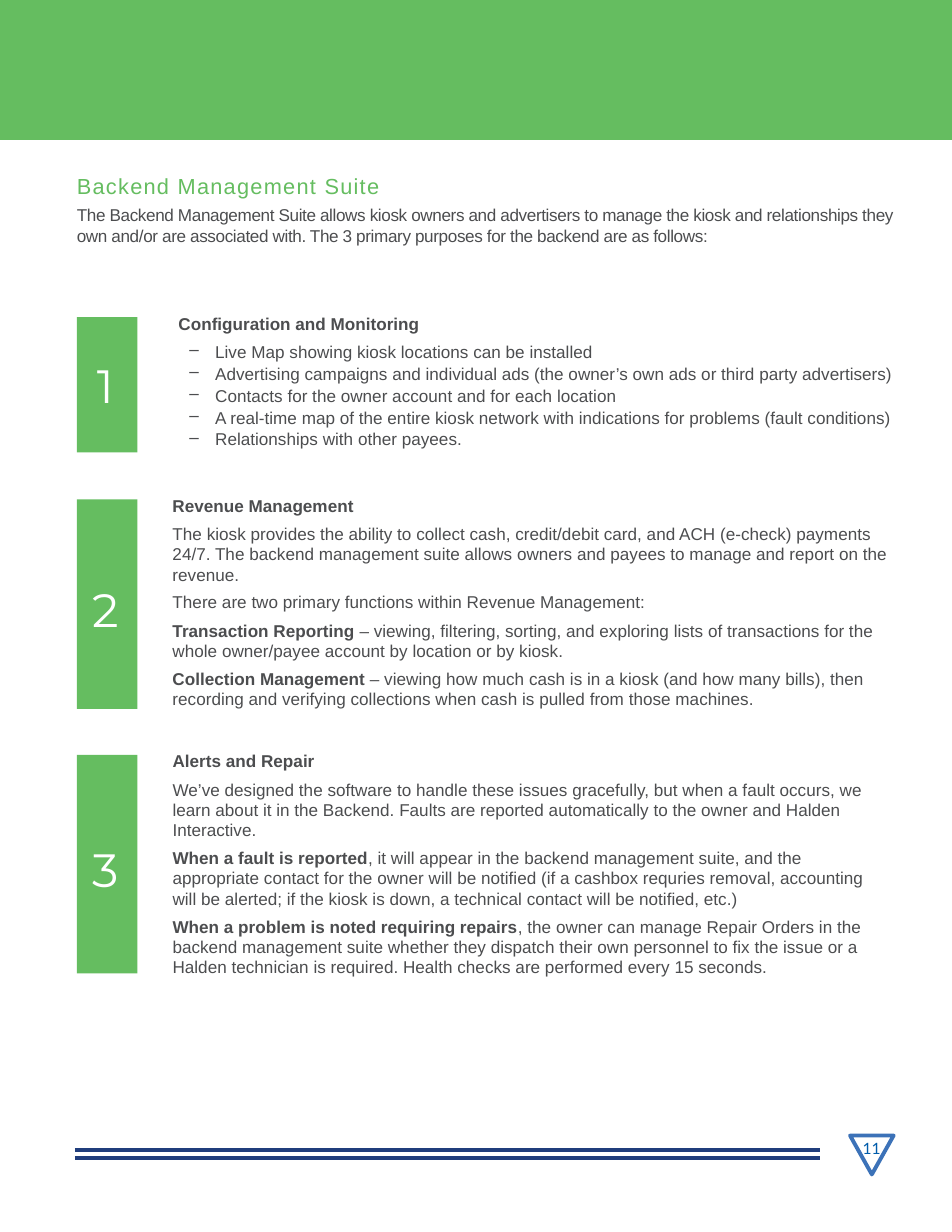
from lxml.etree import SubElement
from pptx import Presentation
from pptx.dml.color import RGBColor
from pptx.enum.shapes import MSO_CONNECTOR, MSO_SHAPE
from pptx.enum.text import MSO_ANCHOR, PP_ALIGN
from pptx.oxml.ns import qn
from pptx.util import Pt

HUES = {"green": "65BD60", "text": "4C4D4F", "navy": "203D7C",
        "blue": "3C72B8", "page": "005CAB", "white": "FFFFFF"}
BODY = {"name": "Arial", "size": Pt(11), "bold": False}
BOLD = {**BODY, "bold": True}
TITLE = {**BODY, "size": Pt(14)}
DIGIT = {"name": "Montserrat", "size": Pt(30), "bold": False}
PAGE = {"name": "Lato", "size": Pt(10), "bold": False}
FRAME = {"margin_left": 0, "margin_top": 0, "margin_right": 0,
         "margin_bottom": 0, "word_wrap": True,
         "vertical_anchor": MSO_ANCHOR.TOP}
EDGE = 0.9  # left indent of running text

INTRO = ("The Backend Management Suite allows kiosk owners and advertisers to "
         "manage the kiosk and relationships they own and/or are associated "
         "with. The 3 primary purposes for the backend are as follows:")
ITEMS = [
    "Live Map showing kiosk locations can be installed",
    "Advertising campaigns and individual ads (the owner’s own ads or third "
    "party advertisers)",
    "Contacts for the owner account and for each location",
    "A real-time map of the entire kiosk network with indications for "
    "problems (fault conditions)",
    "Relationships with other payees.",
]
# Each paragraph: bold lead, plain text, space before, line pitch
REVENUE = [
    ("Revenue Management", "", 0, None),
    ("", "The kiosk provides the ability to collect cash, credit/debit card, "
     "and ACH (e-check) payments 24/7. The backend management suite allows "
     "owners and payees to manage and report on the revenue.", 5.4, 13),
    ("", "There are two primary functions within Revenue Management:",
     4.4, None),
    ("Transaction Reporting ", "– viewing, filtering, sorting, and exploring "
     "lists of transactions for the whole owner/payee account by location or "
     "by kiosk.", 5.4, 13),
    ("Collection Management ", "– viewing how much cash is in a kiosk (and "
     "how many bills), then recording and verifying collections when cash is "
     "pulled from those machines.", 5, 13),
]
ALERTS = [
    ("Alerts and Repair", "", 0, None),
    ("", "We’ve designed the software to handle these issues gracefully, but "
     "when a fault occurs, we learn about it in the Backend. Faults are "
     "reported automatically to the owner and Halden Interactive.", 5.4, 13),
    ("When a fault is reported", ", it will appear in the backend management "
     "suite, and the appropriate contact for the owner will be notified (if a "
     "cashbox requries removal, accounting will be alerted; if the kiosk is "
     "down, a technical contact will be notified, etc.)", 5, 13),
    ("When a problem is noted requiring repairs", ", the owner can manage "
     "Repair Orders in the backend management suite whether they dispatch "
     "their own personnel to fix the issue or a Halden technician is "
     "required. Health checks are performed every 15 seconds.", 5, 13),
]
# Each tile: top, height, top inset
TILES = [(203.8, 87.1, 0), (321.1, 134.6, 5.5), (485.3, 140.4, 6)]


def hue(name):
    return RGBColor.from_string(HUES[name])


def style(item, form):
    for key, value in form.items():
        setattr(item, key, value)


def indent(para, left, first=0):
    props = para._p.get_or_add_pPr()
    props.set("marL", str(Pt(left)))
    props.set("indent", str(Pt(first)))
    return props


def write(para, text, form, tint="text", track=0):
    """Add a run; track is letter spacing in points."""
    run = para.add_run()
    run.text = text
    style(run.font, form)
    run.font.color.rgb = hue(tint)
    if track:
        run._r.get_or_add_rPr().set("spc", str(round(track * 100)))


def add_text(slide, *area):
    frame = slide.shapes.add_textbox(*map(Pt, area)).text_frame
    style(frame, FRAME)
    return frame


def next_para(frame, count):
    return frame.add_paragraph() if count else frame.paragraphs[0]


def add_title(slide, text, *area):
    title = slide.shapes.title
    style(title, dict(zip(("left", "top", "width", "height"), map(Pt, area))))
    style(title.text_frame, FRAME)
    para = title.text_frame.paragraphs[0]
    para.alignment = PP_ALIGN.LEFT
    indent(para, EDGE)
    write(para, text, TITLE, "green", 0.8)


def add_prose(slide, area, paras, track=0):
    frame = add_text(slide, *area)
    for count, (lead, text, gap, pitch) in enumerate(paras):
        para = next_para(frame, count)
        indent(para, EDGE)
        if gap:
            para.space_before = Pt(gap)
        if pitch:
            para.line_spacing = Pt(pitch)
        for part, form in ((lead, BOLD), (text, BODY)):
            if part:
                write(para, part, form, track=track)


def add_list(slide, area, items):
    frame = add_text(slide, *area)
    for count, item in enumerate(items):
        para = next_para(frame, count)
        props = indent(para, 17.3, -16.6)
        SubElement(props, qn("a:buChar")).set("char", "–")
        if count:
            para.space_before = Pt(0.8)
        write(para, item, BODY)


def add_block(slide, kind, area, fill):
    block = slide.shapes.add_shape(kind, *map(Pt, area))
    block.shadow.inherit = False
    block.fill.solid()
    block.fill.fore_color.rgb = hue(fill)
    block.line.fill.background()
    return block


def add_tile(slide, label, top, height, inset):
    tile = add_block(slide, MSO_SHAPE.RECTANGLE, (49.5, top, 38.9, height),
                     "green")
    style(tile.text_frame, {**FRAME, "margin_top": Pt(inset),
                            "margin_right": Pt(2.5),
                            "vertical_anchor": MSO_ANCHOR.MIDDLE})
    para = tile.text_frame.paragraphs[0]
    para.alignment = PP_ALIGN.CENTER
    write(para, label, DIGIT, "white")


def add_rule(slide, y):
    rule = slide.shapes.add_connector(MSO_CONNECTOR.STRAIGHT, Pt(48.2), Pt(y),
                                      Pt(527), Pt(y))
    rule.line.color.rgb = hue("navy")
    rule.line.width = Pt(2.57)
    SubElement(rule._element.spPr, qn("a:effectLst"))


def add_badge(slide, number):
    badge = add_block(slide, MSO_SHAPE.FLOWCHART_MERGE,
                      (546.5, 730, 28, 25), "white")
    badge.line.color.rgb = hue("blue")
    badge.line.width = Pt(2.5)
    para = add_text(slide, 553.7, 732.2, 13, 13.7).paragraphs[0]
    indent(para, EDGE)
    write(para, number, PAGE, "page")


def main():
    deck = Presentation()
    deck.slide_width, deck.slide_height = Pt(612), Pt(792)
    slide = deck.slides.add_slide(deck.slide_layouts[5])
    add_block(slide, MSO_SHAPE.RECTANGLE, (0, 0, 612, 90), "green")
    add_title(slide, "Backend Management Suite", 48.5, 110.9, 526, 17)
    add_prose(slide, (48.5, 131.8, 526, 27), [("", INTRO, 0, 13)], -0.25)
    add_prose(slide, (113.8, 201.6, 157, 14),
              [("Configuration and Monitoring", "", 0, None)])
    add_list(slide, (121, 219.6, 461, 70.6), ITEMS)
    add_prose(slide, (110, 318.2, 465, 138), REVENUE)
    add_prose(slide, (110, 482.4, 453, 147), ALERTS)
    for number, tile in enumerate(TILES, 1):
        add_tile(slide, str(number), *tile)
    for y in (739.4, 744.5):
        add_rule(slide, y)
    add_badge(slide, "11")
    deck.save("out.pptx")


if __name__ == "__main__":
    main()
